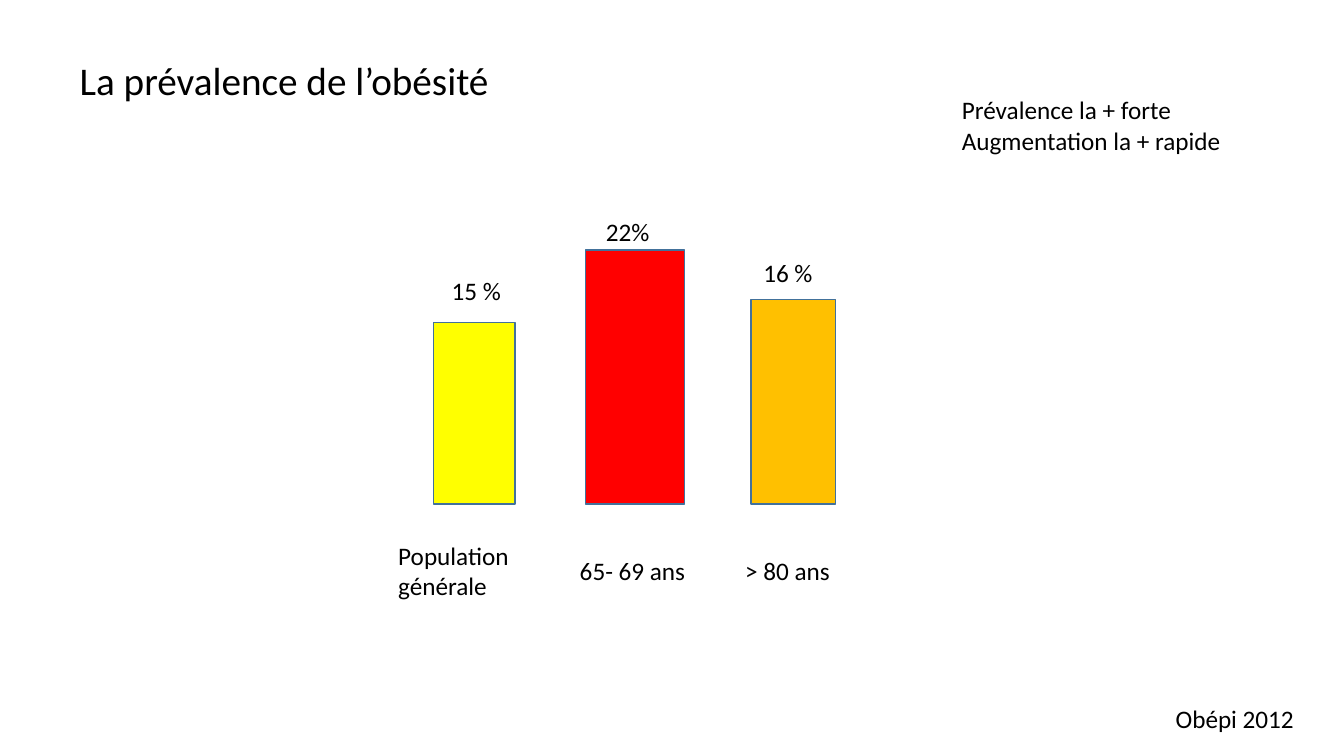
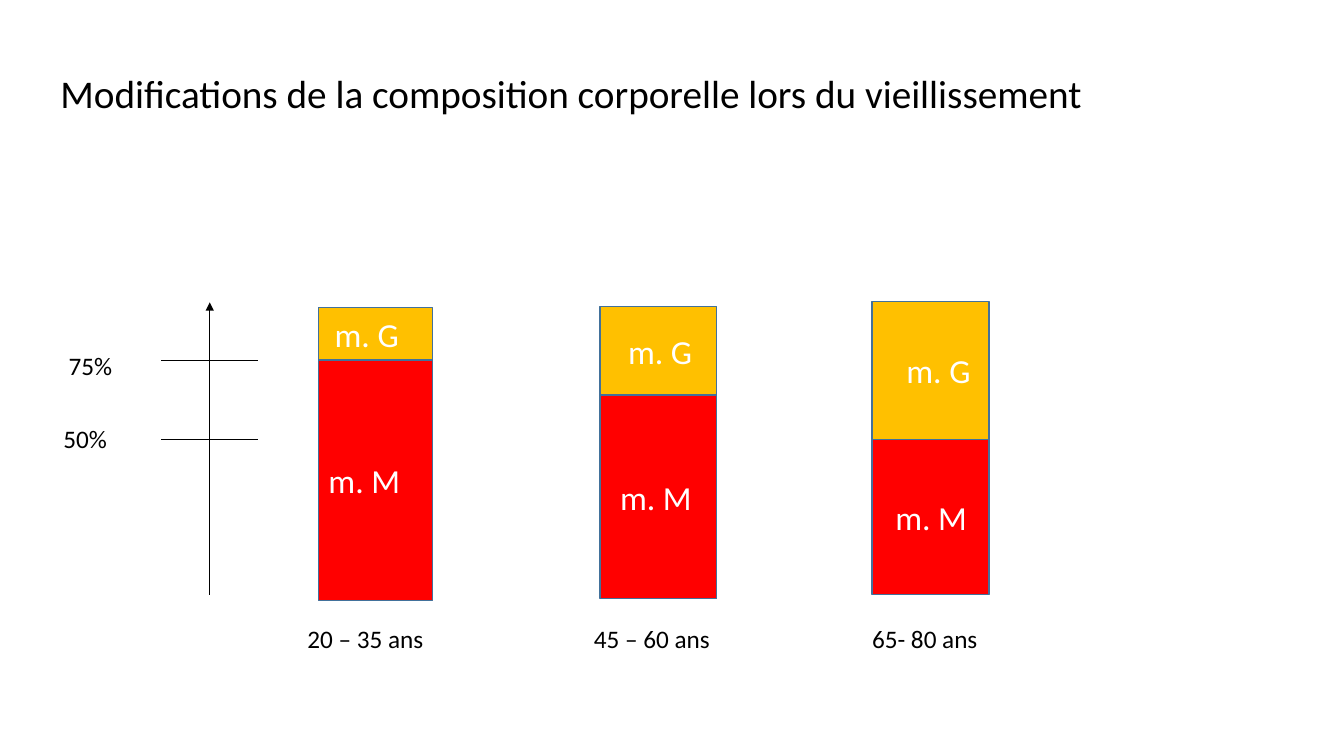
from lxml.etree import SubElement
from pptx import Presentation
from pptx.dml.color import RGBColor
from pptx.enum.shapes import MSO_CONNECTOR as Connector, MSO_SHAPE as Shape
from pptx.enum.text import MSO_ANCHOR as Anchor, PP_ALIGN as Align
from pptx.oxml.ns import qn
from pptx.util import Inches, Pt

BLACK, WHITE = "000000", "FFFFFF"
YELLOW, RED, ORANGE = "FFFF00", "FF0000", "FFC000"
OUTLINE = "42719B"


def color(hex_string):
    return RGBColor.from_string(hex_string)


class Deck:
    FONT = "Calibri"
    TITLE_SIZE, LABEL_SIZE, SEGMENT_SIZE = 28, 18, 24
    INSET = 0.05

    def __init__(self):
        self.prs = Presentation()
        self.prs.slide_width, self.prs.slide_height = Inches(13.33), Inches(7.5)

    def new_slide(self):
        self.slide = self.prs.slides.add_slide(self.prs.slide_layouts[6])

    def fill_text(self, frame, text, size, ink, left_inset=INSET):
        frame.word_wrap = True
        frame.margin_left = Inches(left_inset)
        frame.margin_top = frame.margin_right = frame.margin_bottom = Inches(self.INSET)
        frame.text = text
        for paragraph in frame.paragraphs:
            paragraph.alignment = Align.LEFT
            for run in paragraph.runs:
                run.font.name = self.FONT
                run.font.size = Pt(size)
                run.font.color.rgb = color(ink)

    def label(self, text, left, top, width, height=0.39, size=LABEL_SIZE):
        box = self.slide.shapes.add_textbox(
            Inches(left), Inches(top), Inches(width), Inches(height))
        self.fill_text(box.text_frame, text, size, BLACK)

    def title(self, text, left, top, width):
        self.label(text, left, top, width, 0.54, self.TITLE_SIZE)

    def bar(self, left, top, width, bottom, fill, text="", indent=INSET):
        """Draw an outlined bar from top to bottom, its text starting at indent."""
        bar = self.slide.shapes.add_shape(
            Shape.RECTANGLE, Inches(left), Inches(top), Inches(width), Inches(bottom - top))
        bar.shadow.inherit = False
        bar.fill.solid()
        bar.fill.fore_color.rgb = color(fill)
        bar.line.color.rgb = color(OUTLINE)
        bar.line.width = Pt(1)
        if text:
            bar.text_frame.vertical_anchor = Anchor.MIDDLE
            self.fill_text(bar.text_frame, text, self.SEGMENT_SIZE, WHITE, indent)

    def line(self, x1, y1, x2, y2, arrow=False):
        connector = self.slide.shapes.add_connector(
            Connector.STRAIGHT, Inches(x1), Inches(y1), Inches(x2), Inches(y2))
        connector.line.color.rgb = color(BLACK)
        connector.line.width = Pt(0.5)
        properties = connector._element.spPr
        if arrow:
            SubElement(properties.get_or_add_ln(), qn("a:tailEnd"), type="triangle")
        SubElement(properties, qn("a:effectLst"))


def prevalence_slide(deck):
    deck.new_slide()
    deck.title("La prévalence de l’obésité", 0.74, 0.51, 5.22)
    deck.label("Prévalence la + forte\nAugmentation la + rapide", 9.49, 0.89, 3.07, 0.68)

    baseline = 5
    # bar left, top, width, fill; value and its place; age group and its box
    groups = [
        (4.3, 3.2, 0.81, YELLOW, "15 %", 4.43, 2.68, "Population générale", (3.9, 5.31, 1.5, 0.68)),
        (5.81, 2.48, 0.98, RED, "22%", 5.96, 2.1, "65- 69 ans", (5.7, 5.46, 1.25)),
        (7.45, 2.97, 0.84, ORANGE, "16 %", 7.52, 2.5, "> 80 ans", (7.34, 5.46, 1.3)),
    ]
    for left, top, width, fill, value, value_left, value_top, age, age_box in groups:
        deck.bar(left, top, width, baseline, fill)
        deck.label(value, value_left, value_top, 0.82)
        deck.label(age, *age_box)

    deck.label("Obépi 2012", 11.61, 6.93, 1.72)


def composition_slide(deck):
    deck.new_slide()
    deck.title("Modifications de la composition corporelle lors du vieillissement",
               0.55, 0.64, 11.75)

    axis, half_tick = 2.08, 0.48
    deck.line(axis, 5.9, axis, 3, arrow=True)
    for percent, tick, left, top in [("75%", 3.58, 0.63, 3.43), ("50%", 4.36, 0.58, 4.15)]:
        deck.line(axis - half_tick, tick, axis + half_tick, tick)
        deck.label(percent, left, top, 0.8)

    # bar left, width; top, split, bottom; indents of both texts; age and its left
    columns = [
        (3.16, 1.13, 3.05, 3.57, 5.96, 0.16, 0.1, "20 – 35 ans", 3),
        (5.95, 1.16, 3.04, 3.92, 5.94, 0.28, 0.2, "45 – 60 ans", 5.84),
        (8.65, 1.16, 2.99, 4.36, 5.9, 0.34, 0.23, "65- 80 ans", 8.6),
    ]
    for left, width, top, split, bottom, fat_indent, muscle_indent, age, age_left in columns:
        deck.bar(left, top, width, split, ORANGE, "m. G", fat_indent)
        deck.bar(left, split, width, bottom, RED, "m. M", muscle_indent)
        deck.label(age, age_left, 6.13, 1.5)


def main():
    deck = Deck()
    prevalence_slide(deck)
    composition_slide(deck)
    deck.prs.save("out.pptx")


if __name__ == "__main__":
    main()
